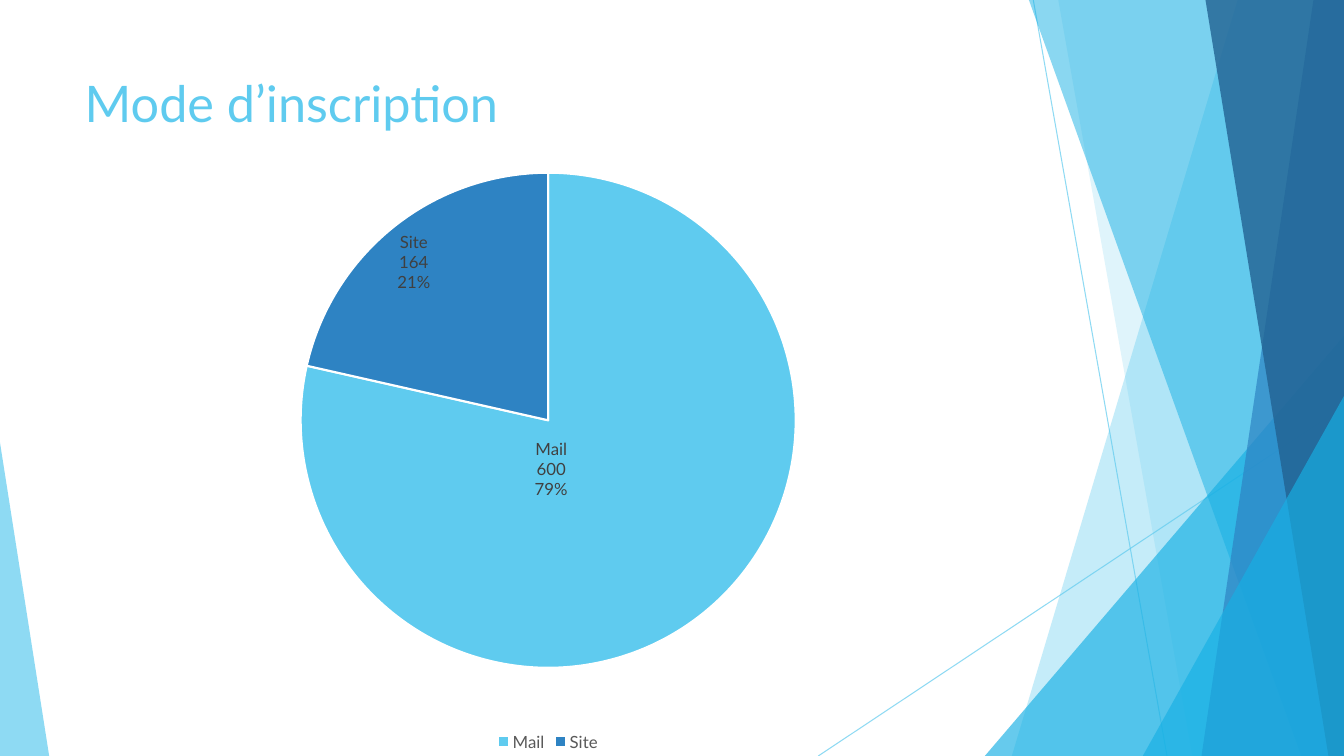
from lxml.etree import SubElement
from pptx import Presentation
from pptx.chart.data import CategoryChartData
from pptx.dml.color import RGBColor
from pptx.enum.chart import XL_CHART_TYPE, XL_LABEL_POSITION, XL_LEGEND_POSITION
from pptx.enum.shapes import MSO_CONNECTOR, MSO_SHAPE
from pptx.enum.text import MSO_ANCHOR, PP_ALIGN
from pptx.oxml import parse_xml
from pptx.oxml.ns import nsdecls, qn
from pptx.util import Cm, Pt

SKY = RGBColor(0x5F, 0xCB, 0xEF)
CYAN = RGBColor(0x17, 0xB0, 0xE4)
BLUE = RGBColor(0x2E, 0x83, 0xC3)
NAVY = RGBColor(0x22, 0x62, 0x92)
WHITE = RGBColor(0xFF, 0xFF, 0xFF)
LABEL_GREY = RGBColor(0x40, 0x40, 0x40)
LEGEND_GREY = RGBColor(0x59, 0x59, 0x59)
WIDTH, HEIGHT = 33.87, 19.05


def paint(fill, color, opacity):
    fill.solid()
    fill.fore_color.rgb = color
    color_node = fill._xPr.find(".//" + qn("a:srgbClr"))
    SubElement(color_node, qn("a:alpha")).set("val", str(opacity * 1000))


def manual_layout(values):
    items = "".join(f'<c:{name} val="{value}"/>' for name, value in values.items())
    return parse_xml(
        f'<c:layout {nsdecls("c")}><c:manualLayout>{items}</c:manualLayout></c:layout>'
    )


deck = Presentation()
deck.slide_width, deck.slide_height = Cm(WIDTH), Cm(HEIGHT)
page = deck.slides.add_slide(deck.slide_layouts[5])

for x1, y1, x2, y2 in [(26.04, 0, 29.41, HEIGHT), (WIDTH, 10.24, 20.62, HEIGHT)]:
    line = page.shapes.add_connector(
        MSO_CONNECTOR.STRAIGHT, Cm(x1), Cm(y1), Cm(x2), Cm(y2)
    )
    line.line.width = Pt(0.75)
    paint(line.line.fill, SKY, 70)
    SubElement(line._element.spPr, qn("a:effectLst"))

facets = [
    ("band", (31.19, 25.5), SKY, 36),
    ("band", (26.67, 30.05), SKY, 20),
    ("triangle", (24.82, 8.46, 9.05, 1), CYAN, 66),
    ("band", (25.93, 32.79), CYAN, 50),
    ("band", (33.1, 30.28), BLUE, 70),
    ("band", (30.38, 33.48), NAVY, 80),
    ("triangle", (28.8, 9.98, 5.07, 1), CYAN, 66),
    ("triangle", (0, 11.15, 1.24, 0), SKY, 70),
]
for kind, geometry, color, opacity in facets:
    if kind == "band":
        top_x, bottom_x = geometry
        outline = page.shapes.build_freeform(Cm(top_x), 0, 1.0)
        corners = [(WIDTH, 0), (WIDTH, HEIGHT), (bottom_x, HEIGHT)]
        outline.add_line_segments([(Cm(x), Cm(y)) for x, y in corners])
        facet = outline.convert_to_shape()
    else:
        left, top, width, apex = geometry
        facet = page.shapes.add_shape(
            MSO_SHAPE.ISOSCELES_TRIANGLE, Cm(left), Cm(top), Cm(width), Cm(HEIGHT - top)
        )
        facet.adjustments[0] = apex
    paint(facet.fill, color, opacity)
    facet.line.fill.background()
    facet.shadow.inherit = False

title = page.shapes.title
page.shapes._spTree.append(title._element)
title_box = {"left": Cm(1.88), "top": Cm(1.7), "width": Cm(23.88), "height": Cm(3.66)}
for name, value in title_box.items():
    setattr(title, name, value)
title.text_frame.vertical_anchor = MSO_ANCHOR.TOP
para = title.text_frame.paragraphs[0]
para.alignment = PP_ALIGN.LEFT
span = para.add_run()
span.text = "Mode d’inscription"
span.font.color.rgb = SKY

data = CategoryChartData()
data.categories = ["Mail", "Site"]
data.add_series("Series 1", [600, 164])
chart = page.shapes.add_chart(
    XL_CHART_TYPE.PIE, Cm(-1.78), Cm(3.81), Cm(31.19), Cm(15.24), data
).chart
chart.has_title = False
chart.has_legend = True
chart.legend.position = XL_LEGEND_POSITION.BOTTOM
chart.legend.include_in_layout = False
chart.legend.font.color.rgb = LEGEND_GREY

plot = chart.plots[0]
plot.vary_by_categories = True
plot_area = chart._chartSpace.chart.plotArea
for automatic in plot_area.findall(qn("c:layout")):
    plot_area.remove(automatic)
pie_place = {"layoutTarget": "inner", "xMode": "edge", "yMode": "edge",
             "x": 0.3, "y": 0.03, "w": 0.4, "h": 0.83}
plot_area.insert(0, manual_layout(pie_place))

fonts = [(span.font, 36), (chart.font, 10), (chart.legend.font, 12)]
slices = [
    (SKY, XL_LABEL_POSITION.CENTER, {"x": -0.06, "y": -0.08}),
    (BLUE, XL_LABEL_POSITION.INSIDE_END, None),
]
for index, (color, position, offset) in enumerate(slices):
    point = plot.series[0].points[index]
    point.format.fill.solid()
    point.format.fill.fore_color.rgb = color
    point.format.line.color.rgb = WHITE
    point.format.line.width = Pt(1.5)
    label = point.data_label
    label.position = position
    label.font.color.rgb = LABEL_GREY
    fonts.append((label.font, 12))
    node = plot.series[0]._element.findall(".//" + qn("c:dLbl"))[index]
    node.insert(1, parse_xml(
        f'<c:spPr {nsdecls("c", "a")}><a:solidFill><a:srgbClr val="{WHITE}"/>'
        "</a:solidFill></c:spPr>"
    ))
    if offset:
        node.insert(1, manual_layout(offset))
    for flag in ("c:showVal", "c:showCatName", "c:showPercent"):
        node.find(qn(flag)).set("val", "1")
    SubElement(node, qn("c:separator")).text = "\n"

for font, size in fonts:
    for name, value in {"name": "Lato", "size": Pt(size)}.items():
        setattr(font, name, value)

deck.save("out.pptx")
